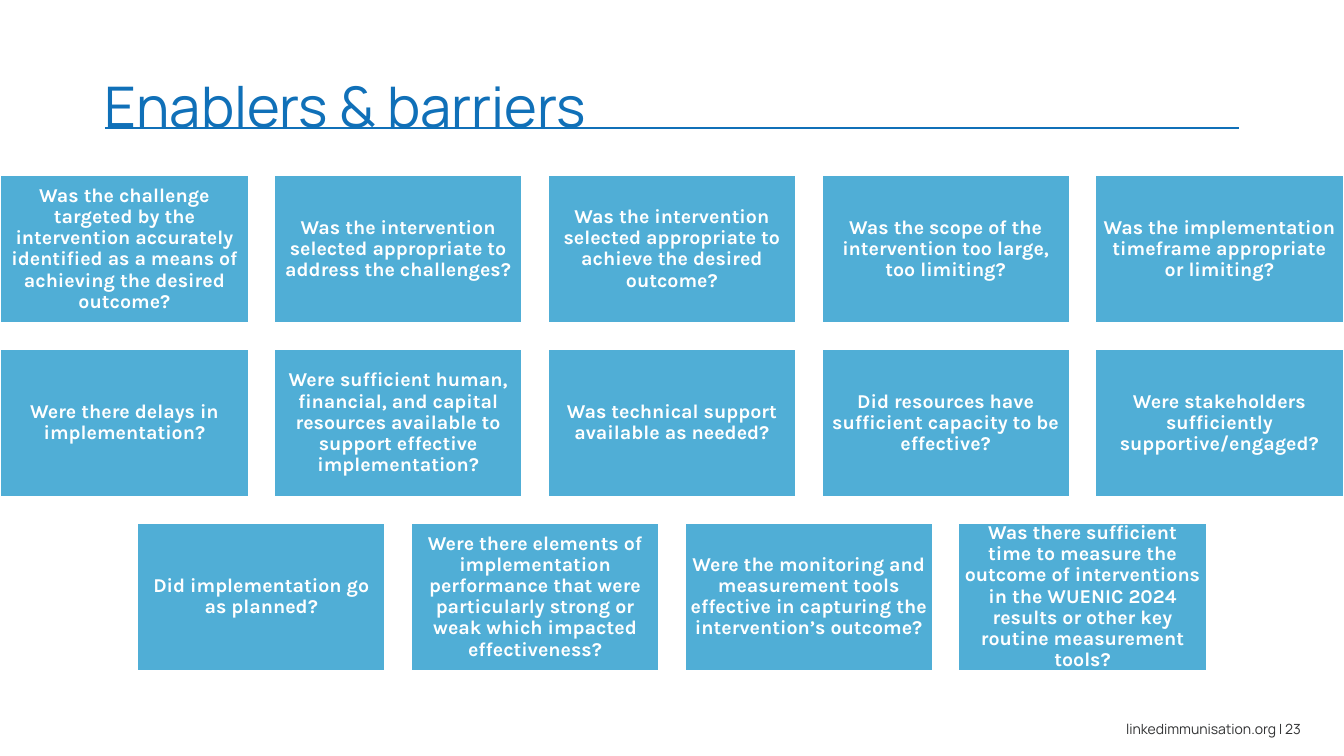
from dataclasses import dataclass

from lxml.etree import SubElement
from pptx import Presentation
from pptx.dml.color import RGBColor
from pptx.enum.shapes import MSO_CONNECTOR, MSO_SHAPE
from pptx.enum.text import MSO_ANCHOR, PP_ALIGN
from pptx.oxml.ns import qn
from pptx.util import Inches, Pt


@dataclass(frozen=True)
class Theme:
    """Colours, fonts and type sizes of the slide."""

    blue: RGBColor = RGBColor.from_string("1070B8")
    card: RGBColor = RGBColor.from_string("50AED6")
    white: RGBColor = RGBColor.from_string("FFFFFF")
    ink: RGBColor = RGBColor.from_string("313233")
    heading_font: str = "Manrope"
    card_font: str = "Karla"
    title_size: int = 40
    card_size: int = 14
    footer_size: int = 10


THEME = Theme()
SLIDE_WIDTH = 13.33
CARD_WIDTH, CARD_HEIGHT = 2.47, 1.48
COLUMN_STEP, ROW_STEP = 2.715, 1.725
GRID_TOP = 1.73

QUESTION_ROWS = [
    [
        "Was the challenge targeted by the intervention accurately identified as a means of achieving the desired outcome?",
        "Was the intervention selected appropriate to address the challenges?",
        "Was the intervention selected appropriate to achieve the desired outcome?",
        "Was the scope of the intervention too large, too limiting?",
        "Was the implementation timeframe appropriate or limiting?",
    ],
    [
        "Were there delays in implementation?",
        "Were sufficient human, financial, and capital resources available to support effective implementation?",
        "Was technical support available as needed?",
        "Did resources have sufficient capacity to be effective?",
        "Were stakeholders sufficiently supportive/engaged?",
    ],
    [
        "Did implementation go as planned?",
        "Were there elements of implementation performance that were particularly strong or weak which impacted effectiveness?",
        "Were the monitoring and measurement tools effective in capturing the intervention’s outcome?",
        "Was there sufficient time to measure the outcome of interventions in the WUENIC 2024 results or other key routine measurement tools?",
    ],
]


def write_text(shape, text, font, size, color, align, anchor, insets, bold=False):
    """Fill a shape with one styled paragraph and return the paragraph."""
    frame = shape.text_frame
    frame.word_wrap = True
    frame.vertical_anchor = anchor
    frame.margin_left, frame.margin_top, frame.margin_right, frame.margin_bottom = map(Inches, insets)
    paragraph = frame.paragraphs[0]
    paragraph.text = text
    paragraph.alignment = align
    paragraph.font.name = font
    paragraph.font.size = Pt(size)
    paragraph.font.bold = bold
    paragraph.font.color.rgb = color
    return paragraph


def add_title(slide, text):
    """Add the slide title."""
    box = slide.shapes.add_textbox(Inches(1.04), Inches(0.41), Inches(11.26), Inches(0.97))
    write_text(box, text, THEME.heading_font, THEME.title_size, THEME.blue,
               PP_ALIGN.LEFT, MSO_ANCHOR.BOTTOM, (0, 0.05, 0.1, 0))


def add_title_rule(slide):
    """Add the thin line under the title."""
    rule = slide.shapes.add_connector(
        MSO_CONNECTOR.STRAIGHT, Inches(1.04), Inches(1.27), Inches(12.29), Inches(1.27))
    rule.line.color.rgb = THEME.blue
    rule.line.width = Pt(1)
    SubElement(rule._element.spPr, qn("a:effectLst"))


def add_card(slide, left, top, question):
    """Add one question card."""
    card = slide.shapes.add_shape(
        MSO_SHAPE.RECTANGLE, Inches(left), Inches(top), Inches(CARD_WIDTH), Inches(CARD_HEIGHT))
    card.shadow.inherit = False
    card.fill.solid()
    card.fill.fore_color.rgb = THEME.card
    card.line.color.rgb = THEME.white
    card.line.width = Pt(2)
    paragraph = write_text(card, question, THEME.card_font, THEME.card_size, THEME.white,
                           PP_ALIGN.CENTER, MSO_ANCHOR.MIDDLE, (0.06,) * 4, bold=True)
    paragraph.line_spacing = 0.9


def add_card_grid(slide):
    """Lay out the question rows, each centred on the slide."""
    for row, questions in enumerate(QUESTION_ROWS):
        row_width = (len(questions) - 1) * COLUMN_STEP + CARD_WIDTH
        row_left = (SLIDE_WIDTH - row_width) / 2
        for column, question in enumerate(questions):
            add_card(slide, row_left + column * COLUMN_STEP, GRID_TOP + row * ROW_STEP, question)


def add_footer(slide, text):
    """Add the web address and page number."""
    box = slide.shapes.add_textbox(Inches(9.96), Inches(6.96), Inches(3.04), Inches(0.4))
    write_text(box, text, THEME.heading_font, THEME.footer_size, THEME.ink,
               PP_ALIGN.RIGHT, MSO_ANCHOR.BOTTOM, (0.1, 0.05, 0.1, 0.05))


def main():
    """Build and save the slide."""
    presentation = Presentation()
    presentation.slide_width = Inches(SLIDE_WIDTH)
    presentation.slide_height = Inches(7.5)
    slide = presentation.slides.add_slide(presentation.slide_layouts[6])
    add_footer(slide, "linkedimmunisation.org | 23")
    add_title_rule(slide)
    add_title(slide, "Enablers & barriers")
    add_card_grid(slide)
    presentation.save("out.pptx")


if __name__ == "__main__":
    main()
